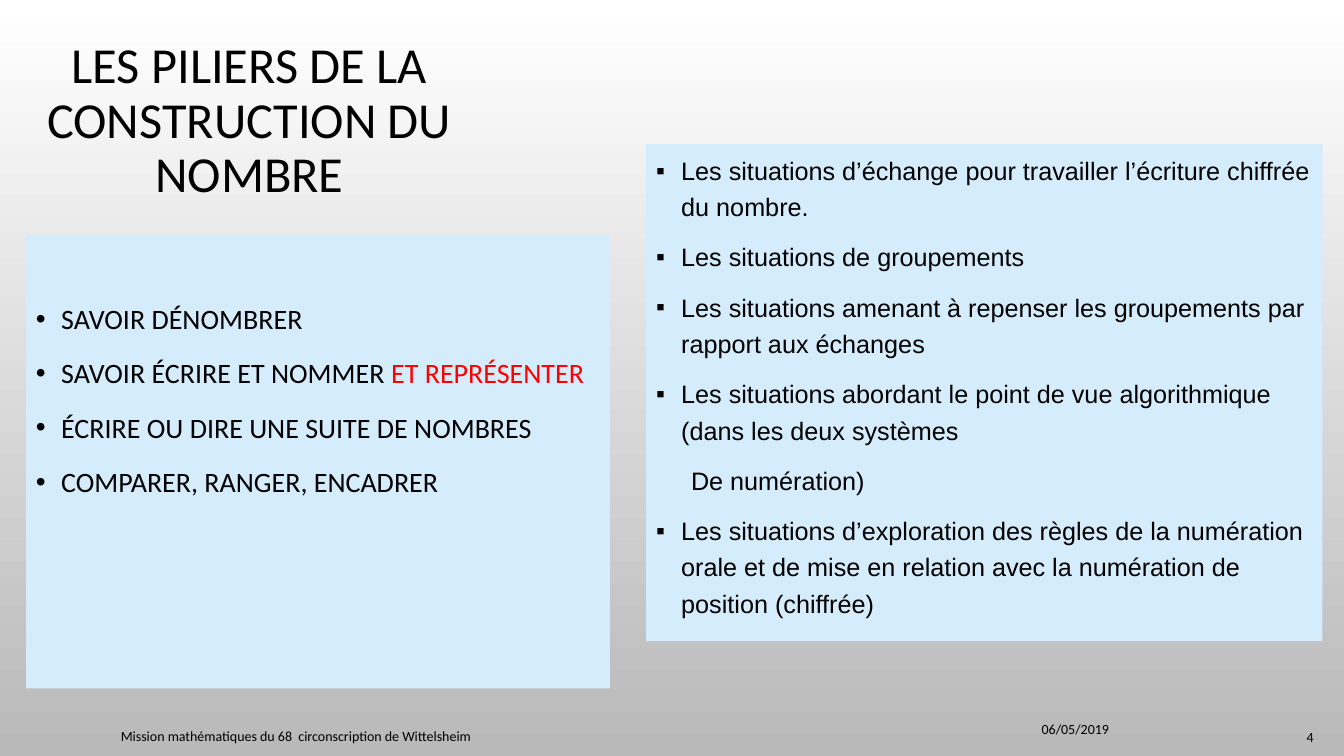
from lxml.etree import SubElement
from pptx import Presentation
from pptx.dml.color import RGBColor
from pptx.enum.shapes import MSO_SHAPE
from pptx.enum.text import MSO_ANCHOR, PP_ALIGN
from pptx.oxml.ns import qn
from pptx.util import Pt

BLACK = RGBColor(0x00, 0x00, 0x00)
WHITE = RGBColor(0xFF, 0xFF, 0xFF)
GREY = RGBColor(0xB9, 0xB9, 0xB9)
RED = RGBColor(0xFF, 0x00, 0x00)
PALE_BLUE = RGBColor(0xD4, 0xEC, 0xFB)


def write_paragraph(paragraph, text, *, size, font="Calibri", align=PP_ALIGN.LEFT,
                    spacing=1.0, before=0, bullet=None, indent=0, highlight=""):
    properties = paragraph._p.get_or_add_pPr()
    if bullet:
        properties.set("marL", str(Pt(18)))
        properties.set("indent", str(Pt(-18)))
        color = SubElement(properties, qn("a:buClr"))
        SubElement(color, qn("a:srgbClr"), val=str(BLACK))
        SubElement(properties, qn("a:buFont"), typeface="Arial")
        SubElement(properties, qn("a:buChar"), char=bullet)
    else:
        properties.set("marL", str(Pt(indent)))
        properties.set("indent", "0")
        SubElement(properties, qn("a:buNone"))
    paragraph.alignment = align
    paragraph.line_spacing = spacing
    paragraph.space_before = Pt(before)
    for words, ink in ((text, BLACK), (highlight, RED)):
        if words:
            run = paragraph.add_run()
            run.text = words
            run.font.size = Pt(size)
            run.font.name = font
            run.font.color.rgb = ink


def set_frame(shape, anchor, top_margin=3.6):
    frame = shape.text_frame
    frame.word_wrap = True
    frame.vertical_anchor = anchor
    frame.margin_left = frame.margin_right = Pt(7.2)
    frame.margin_top, frame.margin_bottom = Pt(top_margin), Pt(3.6)
    return frame


presentation = Presentation()
presentation.slide_width, presentation.slide_height = Pt(960), Pt(540)
slide = presentation.slides.add_slide(presentation.slide_layouts[6])

background = slide.background.fill
background.gradient()
background.gradient_angle = 270
for stop, color in zip(background.gradient_stops, (WHITE, GREY)):
    stop.color.rgb = color

labels = [
    ("LES PILIERS DE LA CONSTRUCTION DU NOMBRE", (16.5, 13.7, 323.3, 146.9),
     dict(size=36, align=PP_ALIGN.CENTER, spacing=0.9)),
    ("06/05/2019", (583.2, 506.2, 216, 28.8), dict(size=10, align=PP_ALIGN.RIGHT)),
    ("Mission mathématiques du 68  circonscription de Wittelsheim",
     (79.2, 511.2, 525.6, 28.8), dict(size=10)),
    ("4", (884.9, 511.9, 60.5, 28.8), dict(size=10, align=PP_ALIGN.RIGHT)),
]
for text, box, style in labels:
    shape = slide.shapes.add_textbox(*map(Pt, box))
    frame = set_frame(shape, MSO_ANCHOR.MIDDLE)
    write_paragraph(frame.paragraphs[0], text, **style)

skills = [
    ("SAVOIR DÉNOMBRER", {}),
    ("SAVOIR ÉCRIRE ET NOMMER ", dict(highlight="ET REPRÉSENTER")),
    ("ÉCRIRE OU DIRE UNE SUITE DE NOMBRES", {}),
    ("COMPARER, RANGER, ENCADRER", {}),
]
situations = [
    ("Les situations d’échange pour travailler l’écriture chiffrée du nombre.", {}),
    ("Les situations de groupements", {}),
    ("Les situations amenant à repenser les groupements par rapport aux échanges", {}),
    ("Les situations abordant le point de vue algorithmique (dans les deux systèmes", {}),
    ("De numération)", dict(bullet=None, indent=25)),
    ("Les situations d’exploration des règles de la numération orale et de mise en "
     "relation avec la numération de position (chiffrée)", {}),
]
panels = [
    (skills, (18.6, 167.8, 417, 324), 42.9, dict(size=20, bullet="•")),
    (situations, (461.5, 103, 483.1, 355), 3.6, dict(size=18, font="Arial", bullet="▪")),
]
for items, box, top_margin, style in panels:
    panel = slide.shapes.add_shape(MSO_SHAPE.RECTANGLE, *map(Pt, box))
    panel.shadow.inherit = False
    panel.fill.solid()
    panel.fill.fore_color.rgb = PALE_BLUE
    panel.line.fill.background()
    frame = set_frame(panel, MSO_ANCHOR.TOP, top_margin)
    for number, (text, changes) in enumerate(items):
        paragraph = frame.add_paragraph() if number else frame.paragraphs[0]
        settings = {**style, **changes}
        write_paragraph(paragraph, text, spacing=1.2, before=10 if number else 0, **settings)

presentation.save("out.pptx")
